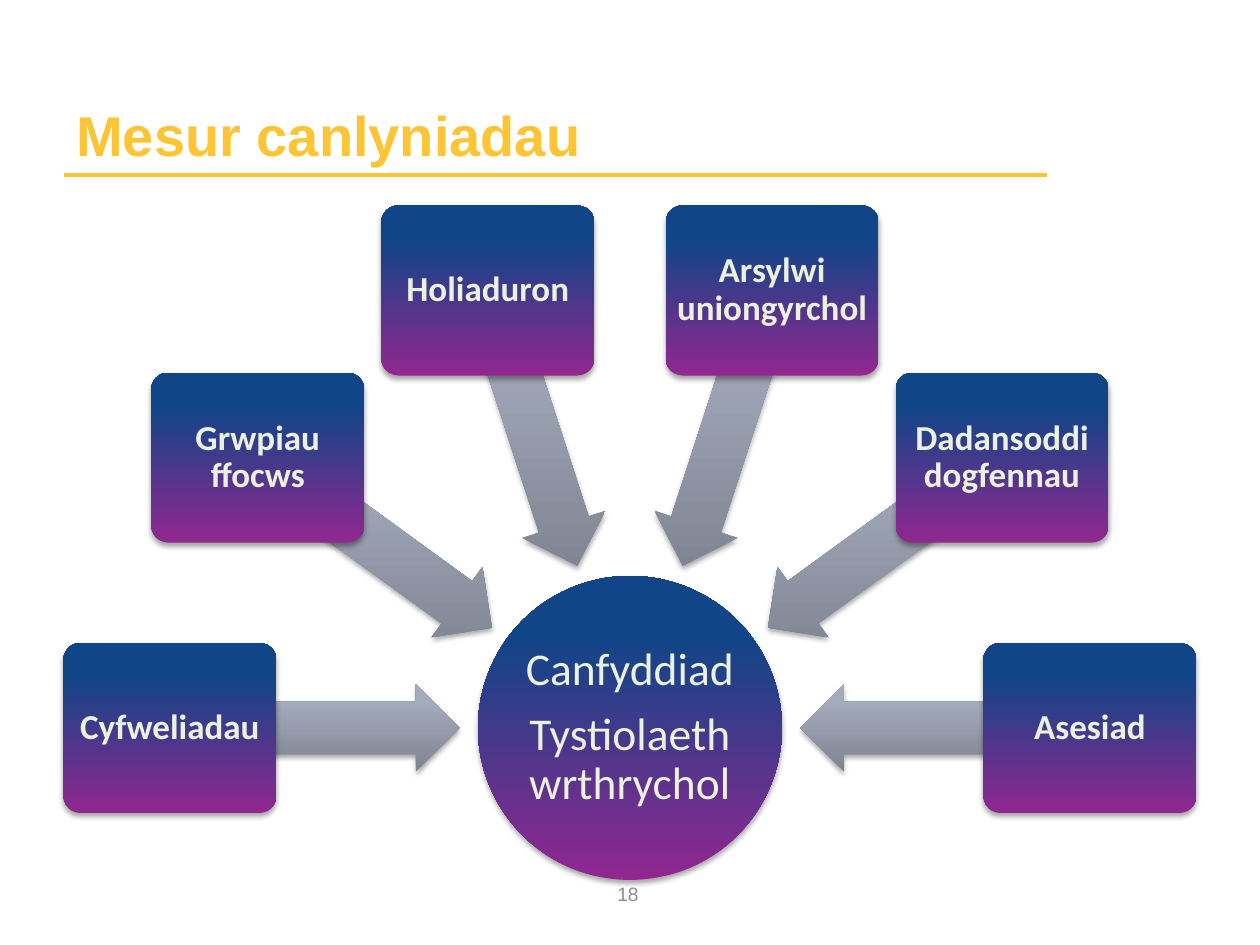
import copy
import math

import pptx
import pptx.dml.color
import pptx.enum.shapes
import pptx.enum.text
import pptx.oxml
import pptx.oxml.ns
import pptx.util

RGBColor = pptx.dml.color.RGBColor
GOLD = RGBColor(0xFD, 0xC5, 0x36)
GREY = RGBColor(0x8C, 0x8C, 0x8C)
CREAM = RGBColor(0xEB, 0xF1, 0xDE)
PURPLE_TO_BLUE = (RGBColor(0x91, 0x27, 0x8F), RGBColor(0x10, 0x45, 0x87), RGBColor(0x0E, 0x45, 0x8A))
SLATE_TO_SILVER = (RGBColor(0x7E, 0x83, 0x91), RGBColor(0xA4, 0xAB, 0xBC), RGBColor(0xA4, 0xAB, 0xBE))
STOP_POSITIONS = (0, 0.8, 1)

PX = 914400 / 126
HUB_X, HUB_Y, HUB_SIZE = 630, 728, 304
BOX_WIDTH, BOX_HEIGHT, BOX_RADIUS = 213, 170, 460
ARROW_WIDTH, ARROW_HEIGHT, ARROW_RADIUS = 291, 87, 316
METHODS = (
    "Cyfweliadau",
    "Grwpiau ffocws",
    "Holiaduron",
    "Arsylwi uniongyrchol",
    "Dadansoddi dogfennau",
    "Asesiad",
)
SHADOW = (
    '<a:outerShdw xmlns:a="http://schemas.openxmlformats.org/drawingml/2006/main" '
    'blurRad="39370" dist="22860" dir="5400000" rotWithShape="0">'
    '<a:srgbClr val="000000"><a:alpha val="35000"/></a:srgbClr></a:outerShdw>'
)


def add_gradient_shape(kind, center_x, center_y, width, height, colors):
    lengths = (center_x - width / 2, center_y - height / 2, width, height)
    shape = slide.shapes.add_shape(kind, *(round(length * PX) for length in lengths))
    shape.line.fill.background()
    shape.shadow.inherit = False
    properties = shape.element.spPr
    properties.find(pptx.oxml.ns.qn("a:effectLst")).append(pptx.oxml.parse_xml(SHADOW))
    shape.fill.gradient()
    shape.fill.gradient_angle = 90
    properties.find(pptx.oxml.ns.qn("a:gradFill")).set("rotWithShape", "0")
    stop_list = properties.find(".//" + pptx.oxml.ns.qn("a:gsLst"))
    stop_list.append(copy.deepcopy(stop_list[-1]))
    for stop, position, color in zip(shape.fill.gradient_stops, STOP_POSITIONS, colors):
        stop.position = position
        stop.color.rgb = color
    return shape


def write_text(shape, texts, font_name, size, color, bold, alignment, anchor, margin=None):
    frame = shape.text_frame
    frame.word_wrap = True
    frame.vertical_anchor = anchor
    if margin is not None:
        frame.margin_left = frame.margin_right = round(margin * PX)
        frame.margin_top = frame.margin_bottom = round(margin * PX)
    for index, text in enumerate(texts):
        paragraph = frame.add_paragraph() if index else frame.paragraphs[0]
        paragraph.alignment = alignment
        if margin is not None:
            paragraph.line_spacing = 0.9
            paragraph.space_after = pptx.util.Pt(round(size * 0.35))
        run = paragraph.add_run()
        run.text = text
        run.font.name = font_name
        run.font.size = pptx.util.Pt(size)
        run.font.bold = bold
        run.font.color.rgb = color


presentation = pptx.Presentation()
presentation.slide_width = round(1260 * PX)
presentation.slide_height = round(945 * PX)
slide = presentation.slides.add_slide(presentation.slide_layouts[6])
shape_kinds = pptx.enum.shapes.MSO_SHAPE
align = pptx.enum.text.PP_ALIGN
anchors = pptx.enum.text.MSO_ANCHOR

rule_ends = (64, 175, 1047, 175)
title_rule = slide.shapes.add_connector(
    pptx.enum.shapes.MSO_CONNECTOR.STRAIGHT, *(round(length * PX) for length in rule_ends)
)
title_rule.line.color.rgb = GOLD
title_rule.line.width = pptx.util.Pt(2)
title_rule.element.spPr.append(pptx.oxml.OxmlElement("a:effectLst")) if hasattr(pptx.oxml, "OxmlElement") else (
    title_rule.element.spPr.append(pptx.oxml.parse_xml(
        '<a:effectLst xmlns:a="http://schemas.openxmlformats.org/drawingml/2006/main"/>'
    ))
)

title = slide.shapes.add_textbox(*(round(length * PX) for length in (64, 37, 983, 137)))
write_text(title, ["Mesur canlyniadau"], "Arial", 32, GOLD, True, align.LEFT, anchors.BOTTOM)

page_number = slide.shapes.add_textbox(*(round(length * PX) for length in (481, 869, 294, 50)))
write_text(page_number, ["18"], "Arial", 11, GREY, False, align.CENTER, anchors.MIDDLE)

hub = add_gradient_shape(shape_kinds.OVAL, HUB_X, HUB_Y, HUB_SIZE, HUB_SIZE, PURPLE_TO_BLUE)
write_text(
    hub, ["Canfyddiad", "Tystiolaeth wrthrychol"], "Calibri", 26, CREAM, False,
    align.CENTER, anchors.MIDDLE, 3,
)

for index, method in enumerate(METHODS):
    degrees = 180 + 36 * index
    across, down = math.cos(math.radians(degrees)), math.sin(math.radians(degrees))
    arrow = add_gradient_shape(
        shape_kinds.LEFT_ARROW, HUB_X + ARROW_RADIUS * across, HUB_Y + ARROW_RADIUS * down,
        ARROW_WIDTH, ARROW_HEIGHT, SLATE_TO_SILVER,
    )
    arrow.adjustments[0] = 0.6
    arrow.adjustments[1] = 0.5
    arrow.rotation = degrees % 360
    box = add_gradient_shape(
        shape_kinds.ROUNDED_RECTANGLE, HUB_X + BOX_RADIUS * across, HUB_Y + BOX_RADIUS * down,
        BOX_WIDTH, BOX_HEIGHT, PURPLE_TO_BLUE,
    )
    box.adjustments[0] = 0.1
    write_text(box, [method], "Calibri", 20, CREAM, True, align.CENTER, anchors.MIDDLE, 5)

presentation.save("out.pptx")
